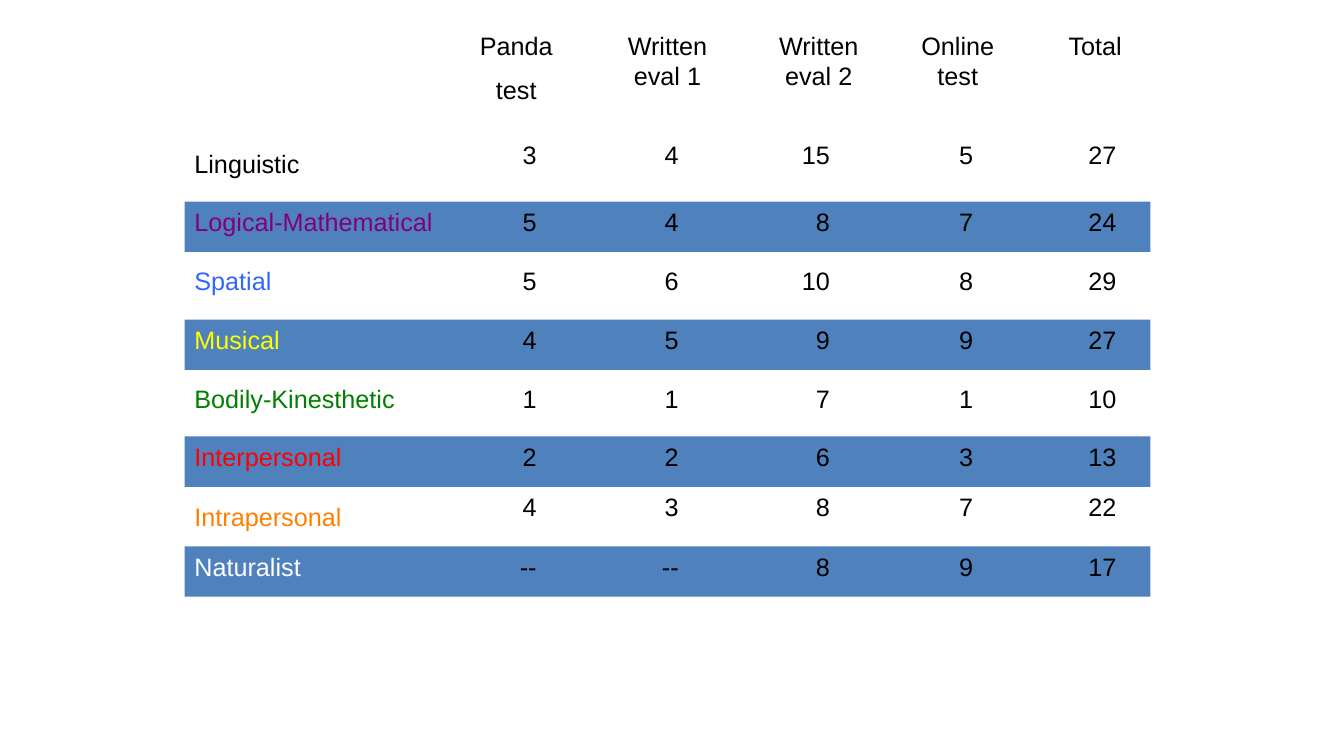
from pptx import Presentation
from pptx.dml.color import RGBColor as Rgb
from pptx.enum.shapes import MSO_SHAPE as Kind
from pptx.enum.text import MSO_AUTO_SIZE as Fit, PP_ALIGN as Align
from pptx.util import Inches, Pt

LEFT = 1.83
TOP = 0.25
LINE = 0.4
HEADS = [
    ("Panda\ntest", 4.33, 1.58, 0.86, Align.CENTER),
    ("Written eval 1", 6.08, 1.08, 0.71, Align.CENTER),
    ("Written eval 2", 7.58, 1.08, 0.71, Align.CENTER),
    ("Online test", 9, 1, 0.71, Align.CENTER),
    ("Total", 10.5, 0.92, LINE, Align.LEFT),
]
COLS = [4.67, 6.08, 7.58, 9, 10.42]
ROWS = [
    ("Linguistic", "000000", 1.67, 1.42, 1.33, "3 4 15 5 27"),
    ("Logical-Mathematical", "800080", 2.75, 2, 2, "5 4 8 7 24"),
    ("Spatial", "3366FF", 1.17, 2.58, 2.58, "5 6 10 8 29"),
    ("Musical", "FFFF00", 1.33, 3.17, 3.17, "4 5 9 9 27"),
    ("Bodily-Kinesthetic", "008000", 2.42, 3.75, 3.75, "1 1 7 1 10"),
    ("Interpersonal", "FF0000", 1.83, 4.33, 4.33, "2 2 6 3 13"),
    ("Intrapersonal", "FF8000", 1.83, 4.92, 4.83, "4 3 8 7 22"),
    ("Naturalist", "FFFFFF", 2.33, 5.42, 5.42, "-- -- 8 9 17"),
]


def tint(code):
    return Rgb.from_string(code)


def write(frame, text, font="Arial", size=18, color="000000", align=Align.LEFT, gap=10):
    for i, line in enumerate(text.split("\n")):
        para = frame.add_paragraph() if i else frame.paragraphs[0]
        para.alignment = align
        if i:
            para.space_before = Pt(gap)
        run = para.add_run()
        run.text = line
        run.font.name = font
        run.font.size = Pt(size)
        run.font.color.rgb = tint(color)


class Board:
    band = "4F81BD"

    def __init__(self, slide):
        self.slide = slide

    def bar(self, x, y, w, h):
        shape = self.slide.shapes.add_shape(
            Kind.RECTANGLE, Inches(x), Inches(y), Inches(w), Inches(h))
        shape.shadow.inherit = False
        shape.fill.solid()
        shape.fill.fore_color.rgb = tint(self.band)
        shape.line.fill.background()

    def text(self, text, x, y, w, h=LINE, **style):
        box = self.slide.shapes.add_textbox(Inches(x), Inches(y), Inches(w), Inches(h))
        frame = box.text_frame
        frame.word_wrap = True
        frame.auto_size = Fit.SHAPE_TO_FIT_TEXT
        write(frame, text, **style)


def main():
    deck = Presentation()
    deck.slide_width = Inches(13.33)
    deck.slide_height = Inches(7.5)
    board = Board(deck.slides.add_slide(deck.slide_layouts[6]))

    for row in ROWS[1::2]:
        board.bar(LEFT, row[3], 9.58, 0.5)
    for head, x, w, h, align in HEADS:
        board.text(head, x, TOP, w, h, align=align)
    for name, color, w, y, base, marks in ROWS:
        board.text(name, LEFT, y, w, color=color)
        for x, mark in zip(COLS, marks.split()):
            board.text(mark, x, base, 0.75, align=Align.RIGHT)

    deck.save("out.pptx")


if __name__ == "__main__":
    main()
